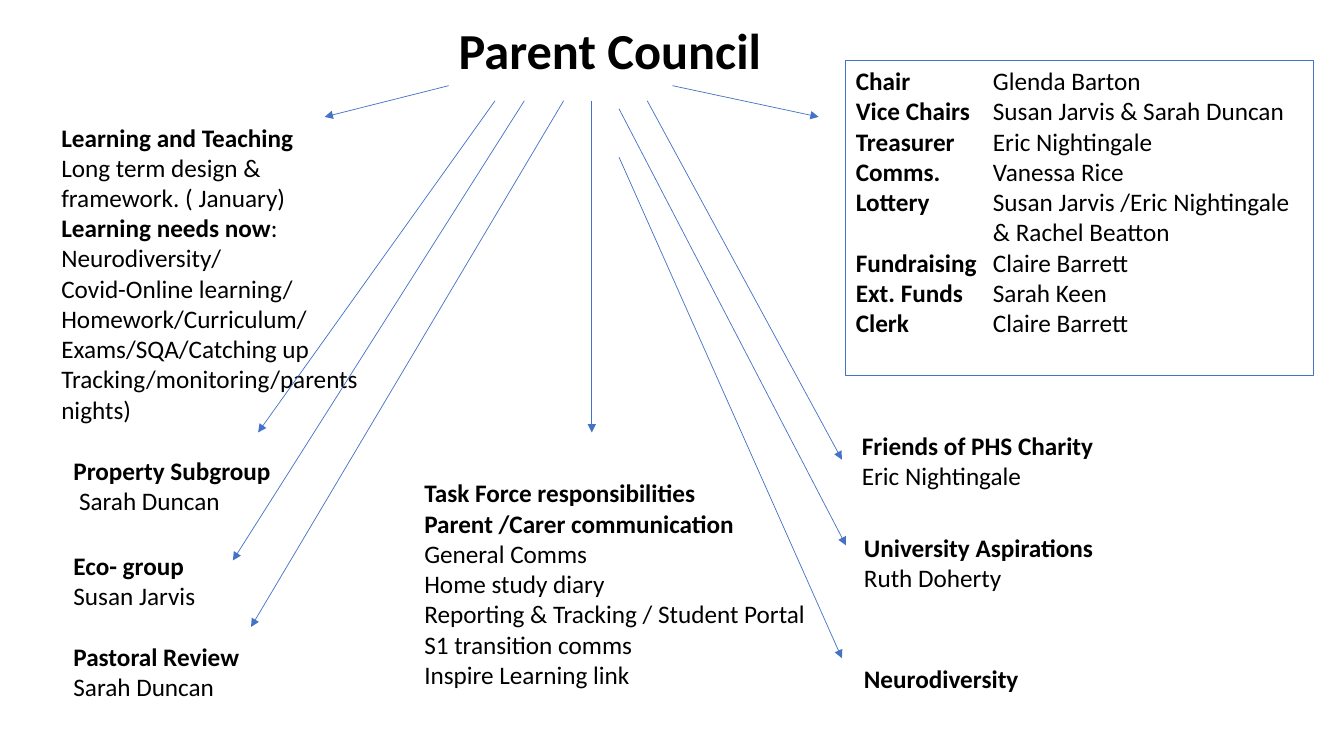
"""Build the Parent Council overview slide."""
from lxml import etree
from pptx import Presentation, util as u
from pptx.dml.color import RGBColor
from pptx.enum import shapes, text
from pptx.oxml import ns

BLUE = "4472C4"


def tint(code):
    return RGBColor.from_string(code)


def write(shape, rows, size=18, wrap=True, tab=None, gaps=()):
    """Fill a shape with rows, each holding bold text, a bar and plain text."""
    frame = shape.text_frame
    frame.word_wrap = wrap
    frame.auto_size = text.MSO_AUTO_SIZE.NONE
    frame.vertical_anchor = text.MSO_ANCHOR.TOP
    for i, row in enumerate(rows):
        para = frame.paragraphs[0] if i == 0 else frame.add_paragraph()
        para.alignment = text.PP_ALIGN.LEFT
        if i in gaps:
            para.space_before = u.Pt(size * 1.22)
        if tab:
            stops = etree.SubElement(para._p.get_or_add_pPr(), ns.qn("a:tabLst"))
            etree.SubElement(stops, ns.qn("a:tab"), pos=str(u.Inches(tab)), algn="l")
        bold, _, plain = row.partition("|")
        for part, heavy in ((bold, True), (plain, False)):
            if part:
                run = para.add_run()
                run.text = part
                run.font.name = "Calibri"
                run.font.size = u.Pt(size)
                run.font.bold = heavy
                run.font.color.rgb = tint("000000")


deck = Presentation()
deck.slide_width, deck.slide_height = u.Inches(13.33), u.Inches(7.5)
slide = deck.slides.add_slide(deck.slide_layouts[6])

title = slide.shapes.add_textbox(*map(u.Inches, (4.45, 0.14, 3.24, 0.71)))
write(title, ["Parent Council"], size=36, wrap=False)

panel = slide.shapes.add_shape(
    shapes.MSO_SHAPE.RECTANGLE, *map(u.Inches, (8.39, 0.6, 4.64, 3.13)))
panel.shadow.inherit = False
panel.fill.background()
panel.line.color.rgb = tint(BLUE)
panel.line.width = u.Pt(0.75)
roles = [
    ("Chair", "Glenda Barton"),
    ("Vice Chairs", "Susan Jarvis & Sarah Duncan"),
    ("Treasurer", "Eric Nightingale"),
    ("Comms.", "Vanessa Rice"),
    ("Lottery", "Susan Jarvis /Eric Nightingale"),
    ("", "& Rachel Beatton"),
    ("Fundraising", "Claire Barrett"),
    ("Ext. Funds", "Sarah Keen"),
    ("Clerk", "Claire Barrett"),
]
write(panel, [f"{role}|\t{name}" for role, name in roles], tab=1.36)

wide = [
    ((0.51, 1.16, 3.16, 3.13), [
        "Learning and Teaching",
        "|Long term design & framework. ( January)",
        "Learning needs now|:",
        "|Neurodiversity/",
        "|Covid-Online learning/",
        "|Homework/Curriculum/",
        "|Exams/SQA/Catching up",
        "|Tracking/monitoring/parents nights)",
    ]),
    ((4.11, 4.69, 4.18, 2.22), [
        "Task Force responsibilities",
        "Parent /Carer communication",
        "|General Comms",
        "|Home study diary",
        "|Reporting & Tracking / Student Portal",
        "|S1 transition comms",
        "|Inspire Learning link",
    ]),
]
for place, rows in wide:
    write(slide.shapes.add_textbox(*map(u.Inches, place)), rows)

groups = [
    ((0.63, 4.47, 2.17, 0.71), ["Property Subgroup", "| Sarah Duncan"]),
    ((0.63, 5.41, 1.86, 1.62),
     ["Eco- group", "|Susan Jarvis", "Pastoral Review", "|Sarah Duncan"]),
    ((8.45, 4.22, 2.52, 1.01), ["Friends of PHS Charity", "|Eric Nightingale"]),
    ((8.47, 5.23, 2.49, 1.01), ["University Aspirations", "|Ruth Doherty"]),
    ((8.47, 6.53, 1.74, 0.4), ["Neurodiversity"]),
]
for place, rows in groups:
    box = slide.shapes.add_textbox(*map(u.Inches, place))
    write(box, rows, wrap=False, gaps=(2,))

arrows = [
    (6.67, 0.85, 8.12, 1.16),
    (4.45, 0.85, 3.22, 1.16),
    (4.91, 1, 2.56, 4.29),
    (5.87, 1, 5.87, 4.29),
    (6.42, 1, 8.35, 4.56),
    (5.2, 1, 2.31, 5.56),
    (6.14, 1.08, 8.39, 5.41),
    (5.59, 1, 2.49, 6.22),
    (6.14, 1.56, 8.35, 6.53),
]
for ends in arrows:
    arrow = slide.shapes.add_connector(
        shapes.MSO_CONNECTOR.STRAIGHT, *map(u.Inches, ends))
    arrow.line.color.rgb = tint(BLUE)
    arrow.line.width = u.Pt(0.5)
    etree.SubElement(arrow.line._get_or_add_ln(), ns.qn("a:tailEnd"), type="triangle")
    etree.SubElement(arrow._element.spPr, ns.qn("a:effectLst"))

deck.save("out.pptx")
